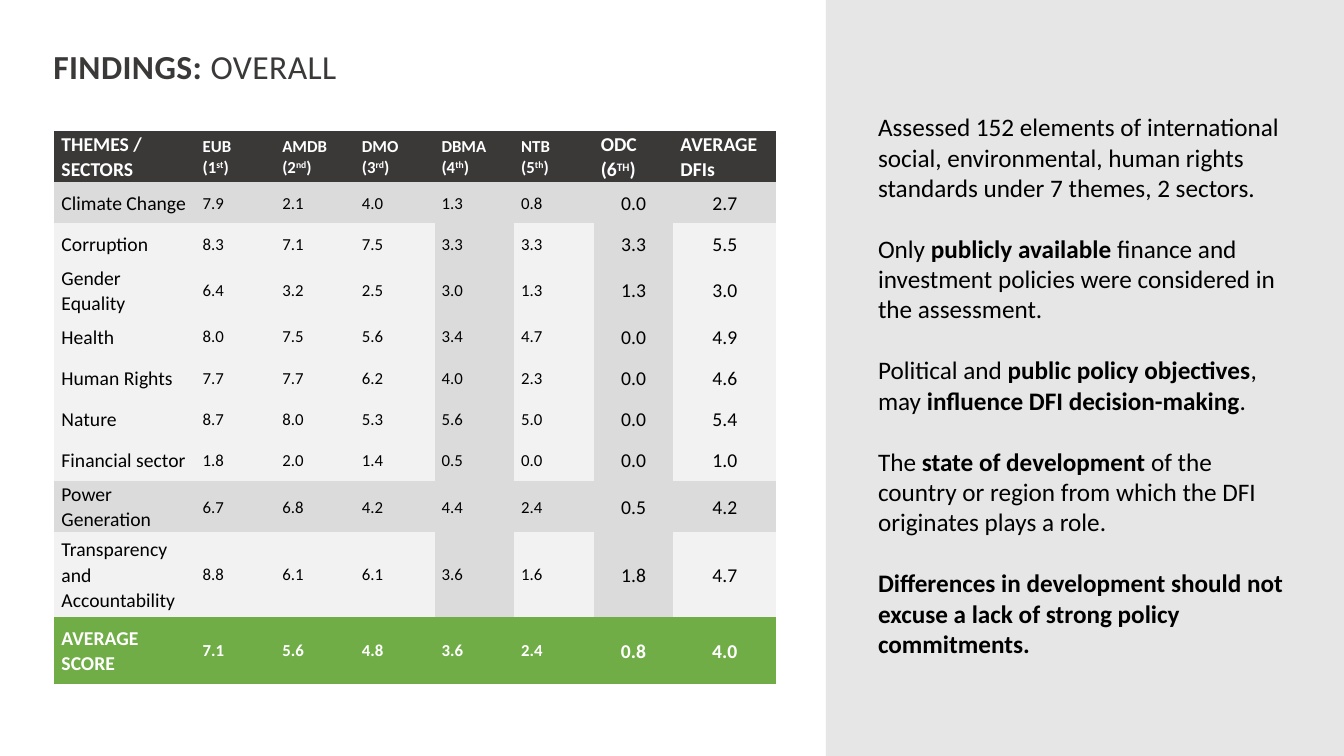
from dataclasses import dataclass

from pptx import Presentation
from pptx.dml.color import RGBColor
from pptx.enum import shapes, text
from pptx.oxml import ns
from pptx.util import Inches, Pt

FONT = "Calibri"
BLACK = RGBColor(0x00, 0x00, 0x00)
WHITE = RGBColor(0xFF, 0xFF, 0xFF)
CHARCOAL = RGBColor(0x3B, 0x38, 0x38)
GREEN = RGBColor(0x70, 0xAD, 0x47)
SHADED = RGBColor(0xDB, 0xDB, 0xDB)
PALE = RGBColor(0xF2, 0xF2, 0xF2)
PANEL = RGBColor(0xE7, 0xE6, 0xE6)

NO_STYLE = "{2D5ABB26-0587-4C30-8999-92F81FD0307C}"
COL_WIDTHS = [1.4] + [0.79] * 6 + [1.02]
BANK_COLS = range(1, 6)
SHADED_COLS = (4, 6)
FIRST_CENTRED_COL = 6


@dataclass
class Row:
    label: str
    values: str
    height: float = 0.41
    shaded: bool = False
    band: RGBColor | None = None

    def fill(self, col: int) -> RGBColor:
        if self.band is not None:
            return self.band
        return SHADED if self.shaded or col in SHADED_COLS else PALE


HEADER = Row("THEMES / SECTORS",
             "EUB\n(1^st^)|AMDB (2^nd^)|DMO (3^rd^)|DBMA (4^th^)|NTB\n(5^th^)|"
             "ODC (6^TH^)|AVERAGE DFIs", band=CHARCOAL)
ROWS = [
    HEADER,
    Row("Climate Change", "7.9|2.1|4.0|1.3|0.8|0.0|2.7", shaded=True),
    Row("Corruption", "8.3|7.1|7.5|3.3|3.3|3.3|5.5"),
    Row("Gender Equality", "6.4|3.2|2.5|3.0|1.3|1.3|3.0"),
    Row("Health", "8.0|7.5|5.6|3.4|4.7|0.0|4.9"),
    Row("Human Rights", "7.7|7.7|6.2|4.0|2.3|0.0|4.6"),
    Row("Nature", "8.7|8.0|5.3|5.6|5.0|0.0|5.4"),
    Row("Financial sector", "1.8|2.0|1.4|0.5|0.0|0.0|1.0"),
    Row("Power Generation", "6.7|6.8|4.2|4.4|2.4|0.5|4.2", shaded=True),
    Row("Transparency and Accountability", "8.8|6.1|6.1|3.6|1.6|1.8|4.7", height=0.84),
    Row("AVERAGE SCORE", "7.1|5.6|4.8|3.6|2.4|0.8|4.0", height=0.67, band=GREEN),
]

REMARKS = [
    "Assessed 152 elements of international social, environmental, human rights "
    "standards under 7 themes, 2 sectors.",
    "Only *publicly available *finance and investment policies were considered in "
    "the assessment.",
    "Political and *public policy objectives*, may *influence DFI decision-making*.",
    "The *state of development *of the country or region from which the DFI "
    "originates plays a role.",
    "*Differences in development should not excuse a lack of strong policy commitments.*",
]


def add_runs(p, marked: str, size: float, color: RGBColor, bold: bool = False) -> None:
    """Write text in which *...* is bold and ^...^ is superscript."""
    mark = "^" if "^" in marked else "*"
    for i, part in enumerate(marked.split(mark)):
        if not part:
            continue
        r = p.add_run()
        r.text = part
        r.font.name, r.font.size = FONT, Pt(size)
        r.font.color.rgb = color
        r.font.bold = bold or (mark == "*" and i % 2 == 1)
        if mark == "^" and i % 2:
            r._r.get_or_add_rPr().set("baseline", "30000")


def add_paragraphs(tf, lines: list[str], size: float, color: RGBColor,
                   bold: bool = False) -> None:
    for i, line in enumerate(lines):
        p = tf.add_paragraph() if i else tf.paragraphs[0]
        add_runs(p, line, size, color, bold)


def fill_cell(cell, row: Row, col: int, content: str) -> None:
    cell.fill.solid()
    cell.fill.fore_color.rgb = row.fill(col)
    cell.margin_left = cell.margin_right = Inches(0.07)
    cell.margin_top = cell.margin_bottom = 0
    cell.vertical_anchor = text.MSO_ANCHOR.MIDDLE
    emphasised = row.band is not None
    add_paragraphs(cell.text_frame, content.split("\n"),
                   12 if col in BANK_COLS else 14,
                   WHITE if emphasised else BLACK, emphasised)
    for p in cell.text_frame.paragraphs:
        p.line_spacing = 1.07
        if col >= FIRST_CENTRED_COL and row is not HEADER:
            p.alignment = text.PP_ALIGN.CENTER


def add_scores(s) -> None:
    table = s.shapes.add_table(len(ROWS), len(COL_WIDTHS), Inches(0.54), Inches(1.3),
                               Inches(sum(COL_WIDTHS)),
                               Inches(sum(row.height for row in ROWS))).table
    table._tbl.tblPr.find(ns.qn("a:tableStyleId")).text = NO_STYLE
    table.horz_banding = False
    for column, width in zip(table.columns, COL_WIDTHS):
        column.width = Inches(width)
    for i, row in enumerate(ROWS):
        table.rows[i].height = Inches(row.height)
        for col, content in enumerate([row.label, *row.values.split("|")]):
            fill_cell(table.cell(i, col), row, col, content)


def add_title(s) -> None:
    tf = s.shapes.add_textbox(Inches(0.43), Inches(0.35), Inches(11.61),
                              Inches(0.66)).text_frame
    tf.word_wrap = True
    tf.vertical_anchor = text.MSO_ANCHOR.MIDDLE
    p = tf.paragraphs[0]
    p.line_spacing = 0.9
    add_runs(p, "*FINDINGS: *OVERALL", 24, CHARCOAL)
    for r in p.runs:
        r._r.get_or_add_rPr().set("spc", "30")


def add_remarks(s) -> None:
    sp = s.shapes.add_shape(shapes.MSO_SHAPE.RECTANGLE, Inches(8.19), 0,
                            Inches(5.15), Inches(7.5))
    sp.shadow.inherit = False
    sp.fill.solid()
    sp.fill.fore_color.rgb = PANEL
    sp.line.fill.background()

    tf = s.shapes.add_textbox(Inches(8.61), Inches(1.06), Inches(4.31),
                              Inches(5.86)).text_frame
    tf.word_wrap = True
    add_paragraphs(tf, REMARKS, 18, BLACK)
    for p in tf.paragraphs[:-1]:
        p.space_after = Pt(22)


def main() -> None:
    prs = Presentation()
    prs.slide_width, prs.slide_height = Inches(13.33), Inches(7.5)
    s = prs.slides.add_slide(prs.slide_layouts[6])
    add_scores(s)
    add_title(s)
    add_remarks(s)
    prs.save("out.pptx")


if __name__ == "__main__":
    main()
